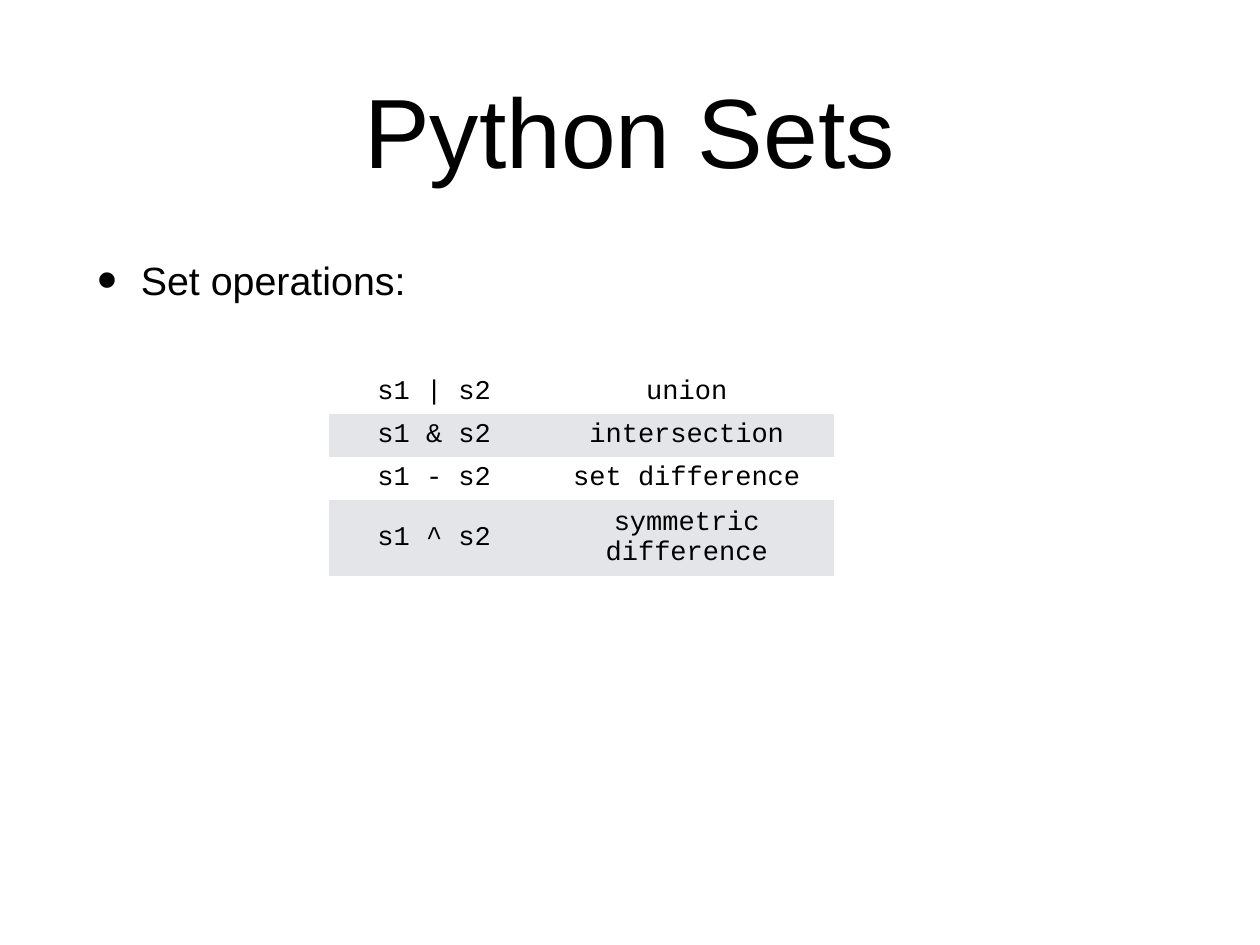
import pptx
import pptx.dml.color
import pptx.enum.text
import pptx.oxml.ns
import pptx.util
from lxml import etree

OPERATIONS = [
    ("s1 | s2", "union"),
    ("s1 & s2", "intersection"),
    ("s1 - s2", "set difference"),
    ("s1 ^ s2", "symmetric difference"),
]


def color(value):
    return pptx.dml.color.RGBColor.from_string(value)


class Deck:
    """Hold the style and current slide; lengths are percentages of the slide."""

    ink = "000000"
    bands = ("FFFFFF", "E3E5E8")
    body_font = "Arial"
    code_font = "Courier New"
    inset = pptx.util.Inches(0.06)

    def __init__(self, width, height):
        self.presentation = pptx.Presentation()
        self.presentation.slide_width = pptx.util.Inches(width)
        self.presentation.slide_height = pptx.util.Inches(height)
        self.slide = self.presentation.slides.add_slide(self.presentation.slide_layouts[5])

    def x(self, share):
        return round(self.presentation.slide_width * share / 100)

    def y(self, share):
        return round(self.presentation.slide_height * share / 100)

    def area(self, left, top, width, height):
        return self.x(left), self.y(top), self.x(width), self.y(height)

    def pad(self, holder):
        holder.margin_left = holder.margin_right = self.inset
        holder.margin_top = holder.margin_bottom = self.inset

    def add_words(self, frame, words, size, font, align):
        paragraph = frame.paragraphs[0]
        paragraph.alignment = align
        run = paragraph.add_run()
        run.text = words
        run.font.size = pptx.util.Pt(size)
        run.font.name = font
        run.font.color.rgb = color(self.ink)
        return paragraph

    def title(self, words, *area):
        heading = self.slide.shapes.title
        heading.left, heading.top, heading.width, heading.height = self.area(*area)
        frame = heading.text_frame
        self.pad(frame)
        frame.word_wrap = True
        frame.auto_size = pptx.enum.text.MSO_AUTO_SIZE.NONE
        frame.vertical_anchor = pptx.enum.text.MSO_ANCHOR.MIDDLE
        self.add_words(frame, words, 80, self.body_font, pptx.enum.text.PP_ALIGN.CENTER)

    def bullet(self, words, *area):
        frame = self.slide.shapes.add_textbox(*self.area(*area)).text_frame
        self.pad(frame)
        frame.word_wrap = True
        paragraph = self.add_words(frame, words, 32, self.body_font, pptx.enum.text.PP_ALIGN.LEFT)
        paragraph.space_before = pptx.util.Pt(22)
        properties = paragraph._p.get_or_add_pPr()
        indent = pptx.util.Inches(0.49)
        properties.set("marL", str(indent))
        properties.set("indent", str(-indent))
        etree.SubElement(properties, pptx.oxml.ns.qn("a:buSzPct")).set("val", "145000")
        etree.SubElement(properties, pptx.oxml.ns.qn("a:buFont")).set("typeface", self.body_font)
        etree.SubElement(properties, pptx.oxml.ns.qn("a:buChar")).set("char", "•")

    def table(self, entries, left, top, columns, rows):
        area = self.area(left, top, sum(columns), sum(rows))
        grid = self.slide.shapes.add_table(len(rows), len(columns), *area).table
        grid.first_row = grid.horz_banding = False
        for column, width in zip(grid.columns, columns):
            column.width = self.x(width)
        for index, (row, height, entry) in enumerate(zip(grid.rows, rows, entries)):
            row.height = self.y(height)
            for cell, words in zip(row.cells, entry):
                self.cell(cell, words, self.bands[index % 2])

    def cell(self, cell, words, fill):
        self.pad(cell)
        cell.vertical_anchor = pptx.enum.text.MSO_ANCHOR.MIDDLE
        properties = cell._tc.get_or_add_tcPr()
        for side in ("lnL", "lnR", "lnT", "lnB"):
            border = etree.SubElement(properties, pptx.oxml.ns.qn(f"a:{side}"))
            etree.SubElement(border, pptx.oxml.ns.qn("a:noFill"))
        cell.fill.solid()
        cell.fill.fore_color.rgb = color(fill)
        self.add_words(cell.text_frame, words, 22, self.code_font, pptx.enum.text.PP_ALIGN.CENTER)


def main():
    deck = Deck(14.22, 10.67)
    deck.title("Python Sets", 7.31, 2.62, 85.37, 22.12)
    deck.bullet("Set operations:", 7.31, 26.52, 85.37, 64.48)
    deck.table(OPERATIONS, 26.09, 39.27, columns=(16.74, 23.35), rows=(4.5, 4.5, 4.5, 7.97))
    deck.presentation.save("out.pptx")


if __name__ == "__main__":
    main()
